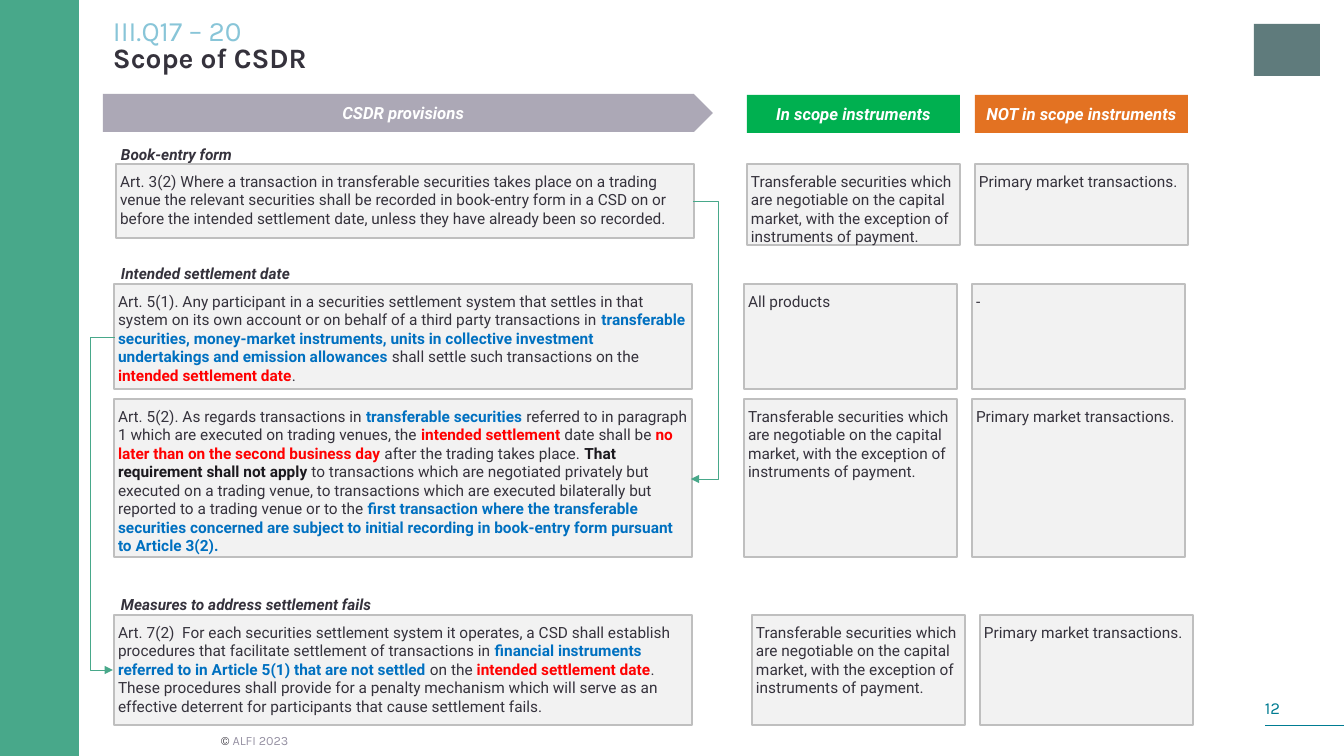
from lxml import etree
from pptx import Presentation
from pptx.dml.color import RGBColor
from pptx.enum.shapes import MSO_CONNECTOR, MSO_SHAPE
from pptx.enum.text import MSO_ANCHOR, PP_ALIGN
from pptx.oxml.ns import qn
from pptx.util import Pt

RECT, PENTAGON = MSO_SHAPE.RECTANGLE, MSO_SHAPE.PENTAGON
STRAIGHT, ELBOW = MSO_CONNECTOR.STRAIGHT, MSO_CONNECTOR.ELBOW
TOP, MIDDLE = MSO_ANCHOR.TOP, MSO_ANCHOR.MIDDLE
LEFT, CENTER = PP_ALIGN.LEFT, PP_ALIGN.CENTER

EMU_PER_PX = 914400 / 100.8
DARK, BLUE, RED, BLACK = "35323C", "0070C0", "FF0000", "1B191E"
GREEN, TEAL, PANEL, EDGE = "48A88A", "007C92", "F2F2F2", "BFBFBF"

# Content: a text is a list of paragraphs, a paragraph a list of (words, colour);
# any colour but DARK marks bold words
ART_3_2 = [[("Art. 3(2) Where a transaction in transferable securities takes place on a trading venue "
             "the relevant securities shall be recorded in book-entry form in a CSD on or before the "
             "intended settlement date, unless they have already been so recorded.", DARK)]]
ART_5_1 = [[
    ("Art. 5(1). Any participant in a securities settlement system that settles in that system on its "
     "own account or on behalf of a third party transactions in ", DARK),
    ("transferable securities, money-market instruments, units in collective investment undertakings "
     "and emission allowances ", BLUE),
    ("shall settle such transactions on the ", DARK),
    ("intended settlement date", RED),
    (".", DARK)]]
ART_5_2 = [[
    ("Art. 5(2). As regards transactions in ", DARK),
    ("transferable securities ", BLUE),
    ("referred to in paragraph 1 which are executed on trading venues, the ", DARK),
    ("intended settlement ", RED),
    ("date shall be ", DARK),
    ("no later than on the second business day", RED),
    (" after the trading takes place. ", DARK),
    ("That requirement shall not apply", BLACK),
    (" to transactions which are negotiated privately but executed on a trading venue, to transactions "
     "which are executed bilaterally but reported to a trading venue or to the ", DARK),
    ("first transaction where the transferable securities concerned are subject to initial recording "
     "in book-entry form pursuant to Article 3(2).", BLUE)]]
ART_7_2 = [
    [("Art. 7(2)  For each securities settlement system it operates, a CSD shall establish procedures "
      "that facilitate settlement of transactions in ", DARK),
     ("financial instruments referred to in Article 5(1) that are not settled ", BLUE),
     ("on the ", DARK),
     ("intended settlement date", RED),
     (".", DARK)],
    [("These procedures shall provide for a penalty mechanism which will serve as an effective "
      "deterrent for participants that cause settlement fails.", DARK)]]
NEGOTIABLE = ("Transferable securities which are negotiable on the capital market, "
              "with the exception of instruments of payment.")
PRIMARY = "Primary market transactions."

# top, provision left, provision height, scope left, scope height, provision, in scope, not in scope
ROWS = [
    (164, 116, 74, 747, 81, ART_3_2, NEGOTIABLE, PRIMARY),
    (284, 114, 105, 744, 105, ART_5_1, "All products", "-"),
    (399, 114, 158, 744, 158, ART_5_2, NEGOTIABLE, PRIMARY),
    (615, 114, 110, 752, 110, ART_7_2, NEGOTIABLE, PRIMARY),
]
PROVISION_W, SCOPE_W, SCOPE_STEP = 578, 213, 228

HEADERS = [  # shape, left, top, width, fill, text
    (PENTAGON, 103, 94, 610, "ACA8B6", "CSDR provisions"),
    (RECT, 747, 95, SCOPE_W, "00B050", "In scope instruments"),
    (RECT, 747 + SCOPE_STEP, 95, SCOPE_W, "E37222", "NOT in scope instruments"),
]
LABELS = [  # top, width, text
    (140, 141, "Book-entry form"),
    (259, 203, "Intended settlement date"),
    (590, 285, "Measures to address settlement fails"),
]
ARROWS = [  # start, end, x of the long segment
    ((693, 201), (691, 479), 719),
    ((115, 337), (113, 670), 90),
]

prs = Presentation()
prs.slide_width, prs.slide_height = round(1344 * EMU_PER_PX), round(756 * EMU_PER_PX)
s = prs.slides.add_slide(prs.slide_layouts[6])


def px(*values):
    return [round(v * EMU_PER_PX) for v in values]


def rgb(value):
    return RGBColor.from_string(value)


def set_font(font, name, size, color, bold=False, italic=False):
    font.name, font.size, font.bold, font.italic = name, Pt(size), bold, italic
    font.color.rgb = rgb(color)


def set_frame(tf, insets=(0, 0), anchor=TOP, wrap=True):
    tf.margin_left, tf.margin_top = tf.margin_right, tf.margin_bottom = px(*insets)
    tf.vertical_anchor, tf.word_wrap = anchor, wrap
    return tf


def add_box(kind, x, y, w, h, fill, line=None):
    sp = s.shapes.add_shape(kind, *px(x, y, w, h))
    sp.shadow.inherit = False
    sp.fill.solid()
    sp.fill.fore_color.rgb = rgb(fill)
    if line:
        sp.line.color.rgb = rgb(line)
        sp.line.width = Pt(1)
    else:
        sp.line.fill.background()
    return sp


def add_text(x, y, w, h, **frame):
    return set_frame(s.shapes.add_textbox(*px(x, y, w, h)).text_frame, **frame)


def add_line(kind, start, end, color):
    cx = s.shapes.add_connector(kind, *px(*start, *end))
    cx.line.color.rgb = rgb(color)
    cx.line.width = Pt(0.5)
    etree.SubElement(cx._element.spPr, qn("a:effectLst"))
    return cx


def add_panel(x, y, w, h, paragraphs):
    sp = add_box(RECT, x, y, w, h, PANEL, EDGE)
    tf = set_frame(sp.text_frame, insets=(4, 8))
    for i, pieces in enumerate(paragraphs):
        p = tf.paragraphs[0] if i == 0 else tf.add_paragraph()
        p.alignment = LEFT
        for words, color in pieces:
            r = p.add_run()
            r.text = words
            set_font(r.font, "Roboto", 11, color, bold=color != DARK)


# Side band, logo placeholder, page number
add_box(RECT, 0, 0, 79, 756, GREEN)
add_box(RECT, 1254, 24, 66, 52, "5F7B7C")
p = add_text(1265, 698, 18, 20, anchor=MIDDLE, wrap=False).paragraphs[0]
p.text = "12"
set_font(p.font, "Karla", 12, TEAL)
add_line(STRAIGHT, (1344, 725), (1265, 725), TEAL)

# Title
p = add_text(113, 20, 994, 74).paragraphs[0]
p.line_spacing = 0.8
r = p.add_run()
r.text = "III.Q17 – 20"
set_font(r.font, "Karla", 20, "88C5D8")
p.add_line_break()
r = p.add_run()
r.text = "Scope of CSDR"
set_font(r.font, "Karla", 20, DARK, bold=True)

# Footer
p = add_text(221, 727, 307, 27, insets=(0, 5), anchor=MIDDLE).paragraphs[0]
for words, color in [("© ", DARK), ("ALFI 2023", "9792A4")]:
    r = p.add_run()
    r.text = words
    set_font(r.font, "Karla", 9, color)

# Column headers
for kind, x, y, w, fill, words in HEADERS:
    sp = add_box(kind, x, y, w, 38, fill)
    p = set_frame(sp.text_frame, insets=(8, 8), anchor=MIDDLE, wrap=False).paragraphs[0]
    p.text, p.alignment = words, CENTER
    set_font(p.font, "Roboto", 12, "FFFFFF", bold=True, italic=True)

# Section labels
for y, w, words in LABELS:
    p = add_text(111, y, w, 29, insets=(10, 5), wrap=False).paragraphs[0]
    p.text = words
    set_font(p.font, "Roboto", 11, DARK, bold=True, italic=True)

# Provision and scope panels
for y, x, h, scope_x, scope_h, provision, *scopes in ROWS:
    add_panel(x, y, PROVISION_W, h, provision)
    for i, words in enumerate(scopes):
        add_panel(scope_x + i * SCOPE_STEP, y, SCOPE_W, scope_h, [[(words, DARK)]])

# Elbow arrows between provisions
for start, end, bend_x in ARROWS:
    cx = add_line(ELBOW, start, end, GREEN)
    bend = round(100000 * (start[0] - bend_x) / (start[0] - end[0]))
    guides = cx._element.spPr.find(qn("a:prstGeom")).get_or_add_avLst()
    etree.SubElement(guides, qn("a:gd"), name="adj1", fmla=f"val {bend}")
    etree.SubElement(cx.line._get_or_add_ln(), qn("a:tailEnd"), type="triangle")

prs.save("out.pptx")
